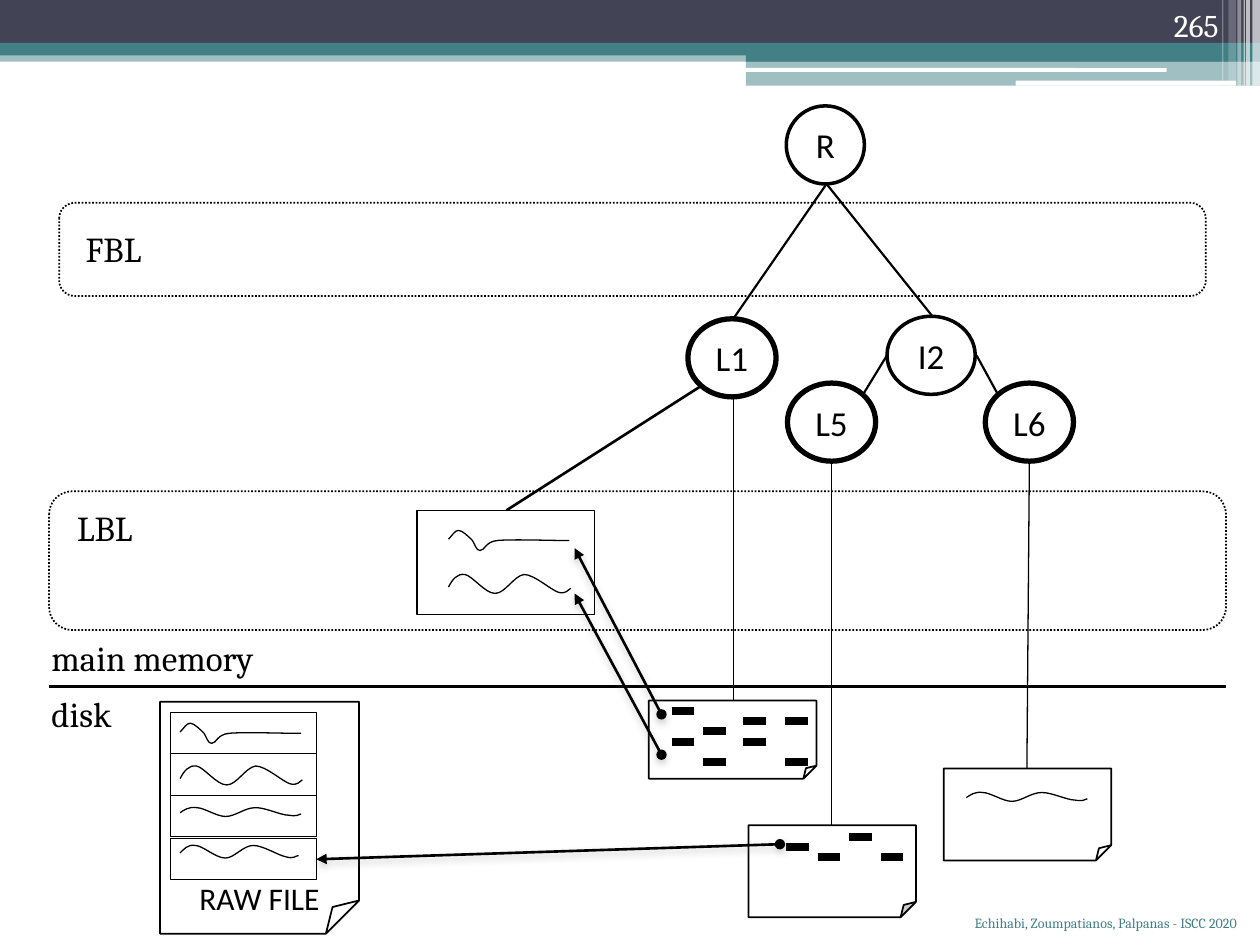
"""Build the slide showing an index tree across main memory and disk."""
from dataclasses import dataclass

from lxml import etree
from pptx import Presentation
from pptx import util as u
from pptx.dml.color import RGBColor
from pptx.enum import dml, shapes, text
from pptx.oxml import ns

SCALE = 9144
COLORS = {"ink": "000000", "paper": "FFFFFF", "navy": "424456",
          "teal": "438086", "shadow": "808080"}
KIND = shapes.MSO_SHAPE
ALIGN = text.PP_ALIGN
ANCHOR = text.MSO_ANCHOR


@dataclass(frozen=True)
class Box:
    x: int
    y: int
    w: int
    h: int

    def emu(self) -> list[int]:
        return [n * SCALE for n in (self.x, self.y, self.w, self.h)]


@dataclass(frozen=True)
class Bar:
    box: Box
    color: str
    alpha: int = 100
    kind: KIND = KIND.RECTANGLE


@dataclass(frozen=True)
class Node:
    label: str
    box: Box
    weight: float


@dataclass(frozen=True)
class Label:
    words: str
    box: Box
    size: int = 20
    align: ALIGN = ALIGN.LEFT
    color: str = "ink"
    font: str = "Cambria"
    anchor: ANCHOR = ANCHOR.TOP


BARS = [
    Bar(Box(0, 40, 1000, 9), "teal", 50),
    Bar(Box(0, 0, 1000, 34), "navy"),
    Bar(Box(0, 34, 1000, 10), "teal"),
    Bar(Box(592, 39, 408, 10), "teal"),
    Bar(Box(592, 48, 408, 20), "teal", 50),
    Bar(Box(591, 54, 335, 3), "paper", 100, KIND.ROUNDED_RECTANGLE),
    Bar(Box(806, 64, 175, 4), "paper", 100, KIND.ROUNDED_RECTANGLE),
] + [Bar(Box(x, 0, w, h), "paper", alpha) for x, w, h, alpha in [
    (994, 6, 68, 65), (989, 3, 68, 65), (987, 1, 68, 60),
    (982, 3, 68, 40), (975, 6, 64, 20), (970, 1, 64, 30)]]

NODES = [
    Node("R", Box(624, 84, 62, 62), 2),
    Node("L1", Box(546, 253, 70, 62), 3),
    Node("I2", Box(704, 251, 70, 62), 2),
    Node("L6", Box(782, 304, 70, 62), 3),
    Node("L5", Box(625, 304, 70, 62), 3),
]
LINKS = [
    (39, 545, 973, 545, 1.75),
    (582, 315, 582, 556, 0.75),
    (656, 146, 740, 251, 1.25),
    (656, 146, 582, 253, 1.25),
    (685, 313, 704, 282, 1.25),
    (775, 282, 792, 313, 1.25),
    (817, 366, 815, 610, 0.75),
    (660, 366, 660, 655, 0.75),
    (557, 306, 402, 405, 1.5),
]
POINTERS = [(619, 670, 251, 682), (525, 567, 456, 435), (525, 599, 456, 471)]
BUFFERS = [Box(39, 390, 934, 110), Box(47, 161, 910, 74)]
PAGES = [Box(515, 556, 133, 62), Box(127, 557, 158, 184),
         Box(749, 610, 133, 73), Box(594, 655, 133, 73)]
DASHES = [
    [(533, 564), (558, 580), (590, 572), (623, 572)],
    [(533, 589), (558, 605), (590, 589), (623, 605)],
    [(624, 672), (649, 680), (674, 664), (699, 680)],
]
LOW = [(0, 5), (3, 3), (7, 0), (13, 1), (19, 1), (29, 8), (36, 8), (44, 8),
       (51, 1), (60, 1), (68, 1), (80, 7), (86, 7), (92, 8), (94, 7), (96, 6)]
MID = [(0, 7), (3, 4), (6, 0), (12, 1), (18, 1), (28, 11), (36, 11), (43, 11),
       (50, 1), (58, 1), (66, 1), (78, 9), (84, 10), (90, 12), (92, 9), (94, 9)]
HIGH = [(0, 11), (3, 5), (7, 0), (13, 1), (19, 2), (29, 16), (37, 16), (45, 16),
        (52, 2), (60, 1), (68, 1), (81, 13), (87, 15), (93, 17), (95, 13), (97, 12)]
DIP = [(0, 7), (3, 4), (5, 0), (8, 0), (11, 0), (16, 5), (19, 8), (21, 11),
       (22, 16), (25, 16), (29, 16), (29, 9), (39, 8), (50, 7), (81, 8),
       (90, 8), (100, 8), (90, 8), (96, 8)]
WAVES = [(143, 640, LOW), (143, 670, MID), (143, 607, HIGH), (143, 574, DIP),
         (767, 628, LOW), (356, 455, HIGH), (356, 421, DIP)]
LABELS = [
    Label("265", Box(894, 0, 83, 40), 18, ALIGN.RIGHT, "paper", anchor=ANCHOR.BOTTOM),
    Label("FBL", Box(50, 176, 72, 44), align=ALIGN.RIGHT),
    Label("LBL", Box(42, 397, 73, 44), align=ALIGN.RIGHT),
    Label("main memory", Box(31, 500, 194, 44)),
    Label("disk", Box(31, 545, 72, 44)),
    Label("RAW FILE", Box(127, 695, 158, 36), 18, ALIGN.CENTER,
          font="Calibri", anchor=ANCHOR.MIDDLE),
    Label("Echihabi, Zoumpatianos, Palpanas - ISCC 2020",
          Box(633, 721, 359, 29), 8, ALIGN.RIGHT, "teal"),
]


def rgb(name: str) -> RGBColor:
    return RGBColor.from_string(COLORS[name])


def add_xml(parent, tag: str, **attrs):
    return etree.SubElement(parent, ns.qn(tag), {k: str(v) for k, v in attrs.items()})


def style(sp, fill: str = "", weight: float = 0) -> None:
    sp.shadow.inherit = False
    if fill:
        sp.fill.solid()
        sp.fill.fore_color.rgb = rgb(fill)
    else:
        sp.fill.background()
    if weight:
        sp.line.color.rgb = rgb("ink")
        sp.line.width = u.Pt(weight)
    else:
        sp.line.fill.background()


def add_box(s, kind: KIND, box: Box, fill: str = "", weight: float = 0):
    sp = s.shapes.add_shape(kind, *box.emu())
    style(sp, fill, weight)
    return sp


def add_bar(s, bar: Bar) -> None:
    sp = add_box(s, bar.kind, bar.box, bar.color)
    if bar.alpha < 100:
        color = sp._element.spPr.find(".//" + ns.qn("a:srgbClr"))
        add_xml(color, "a:alpha", val=bar.alpha * 1000)


def write(sp, label: Label) -> None:
    tf = sp.text_frame
    tf.text = label.words
    tf.vertical_anchor = label.anchor
    p = tf.paragraphs[0]
    p.alignment = label.align
    r = p.runs[0]
    r.font.name, r.font.size = label.font, u.Pt(label.size)
    r.font.color.rgb = rgb(label.color)


def add_label(s, label: Label) -> None:
    sp = s.shapes.add_textbox(*label.box.emu())
    sp.text_frame.word_wrap = True
    write(sp, label)


def add_node(s, node: Node) -> None:
    sp = add_box(s, KIND.OVAL, node.box, weight=node.weight)
    tf = sp.text_frame
    tf.word_wrap = False
    tf.margin_left = tf.margin_right = tf.margin_top = tf.margin_bottom = 0
    write(sp, Label(node.label, node.box, 20, ALIGN.CENTER, font="Calibri",
                    anchor=ANCHOR.MIDDLE))


def add_link(parent, x1: int, y1: int, x2: int, y2: int, weight: float,
             pointer: bool = False) -> None:
    ends = [n * SCALE for n in (x1, y1, x2, y2)]
    sp = parent.shapes.add_connector(shapes.MSO_CONNECTOR.STRAIGHT, *ends)
    sp.line.color.rgb = rgb("ink")
    sp.line.width = u.Pt(weight)
    effects = add_xml(sp._element.spPr, "a:effectLst")
    if pointer:
        ln = sp.line._get_or_add_ln()
        add_xml(ln, "a:headEnd", type="oval")
        add_xml(ln, "a:tailEnd", type="triangle")
        shadow = add_xml(effects, "a:outerShdw", blurRad=u.Pt(4.1), dist=u.Pt(2),
                         dir=5400000, rotWithShape=0)
        color = add_xml(shadow, "a:srgbClr", val=COLORS["shadow"])
        add_xml(color, "a:alpha", val=40000)


def add_wave(s, x: int, y: int, points: list[tuple[int, int]]) -> None:
    start, *rest = [(x + dx, y + dy) for dx, dy in points]
    builder = s.shapes.build_freeform(*start, scale=SCALE)
    builder.add_line_segments(rest, close=False)
    sp = builder.convert_to_shape()
    style(sp, weight=0.75)
    outline = sp._element.spPr.find(".//" + ns.qn("a:path"))
    steps = outline.findall(ns.qn("a:lnTo"))
    for i in range(0, len(steps), 3):
        curve = add_xml(outline, "a:cubicBezTo")
        for step in steps[i:i + 3]:
            curve.append(step[0])
            outline.remove(step)


def main() -> None:
    prs = Presentation()
    prs.slide_width, prs.slide_height = 1000 * SCALE, 750 * SCALE
    s = prs.slides.add_slide(prs.slide_layouts[6])
    for bar in BARS:
        add_bar(s, bar)
    for box in BUFFERS:
        sp = add_box(s, KIND.ROUNDED_RECTANGLE, box, weight=1)
        sp.line.dash_style = dml.MSO_LINE.ROUND_DOT
    for link in LINKS:
        add_link(s, *link)
    for node in NODES:
        add_node(s, node)
    for box in PAGES:
        add_box(s, KIND.FOLDED_CORNER, box, "paper" if box == PAGES[-1] else "", 1)
    for row in range(4):
        add_box(s, KIND.RECTANGLE, Box(135, 565 + row * 100 // 3, 116, 33), weight=0.25)
    add_box(s, KIND.RECTANGLE, Box(331, 405, 141, 83), "paper", 0.75)
    for wave in WAVES:
        add_wave(s, *wave)
    for strip in DASHES:
        group = s.shapes.add_group_shape()
        for x, y in strip:
            add_link(group, x, y, x + 18, y, 4.5)
    for pointer in POINTERS:
        add_link(s, *pointer, 1.5, pointer=True)
    for label in LABELS:
        add_label(s, label)
    prs.save("out.pptx")


if __name__ == "__main__":
    main()
